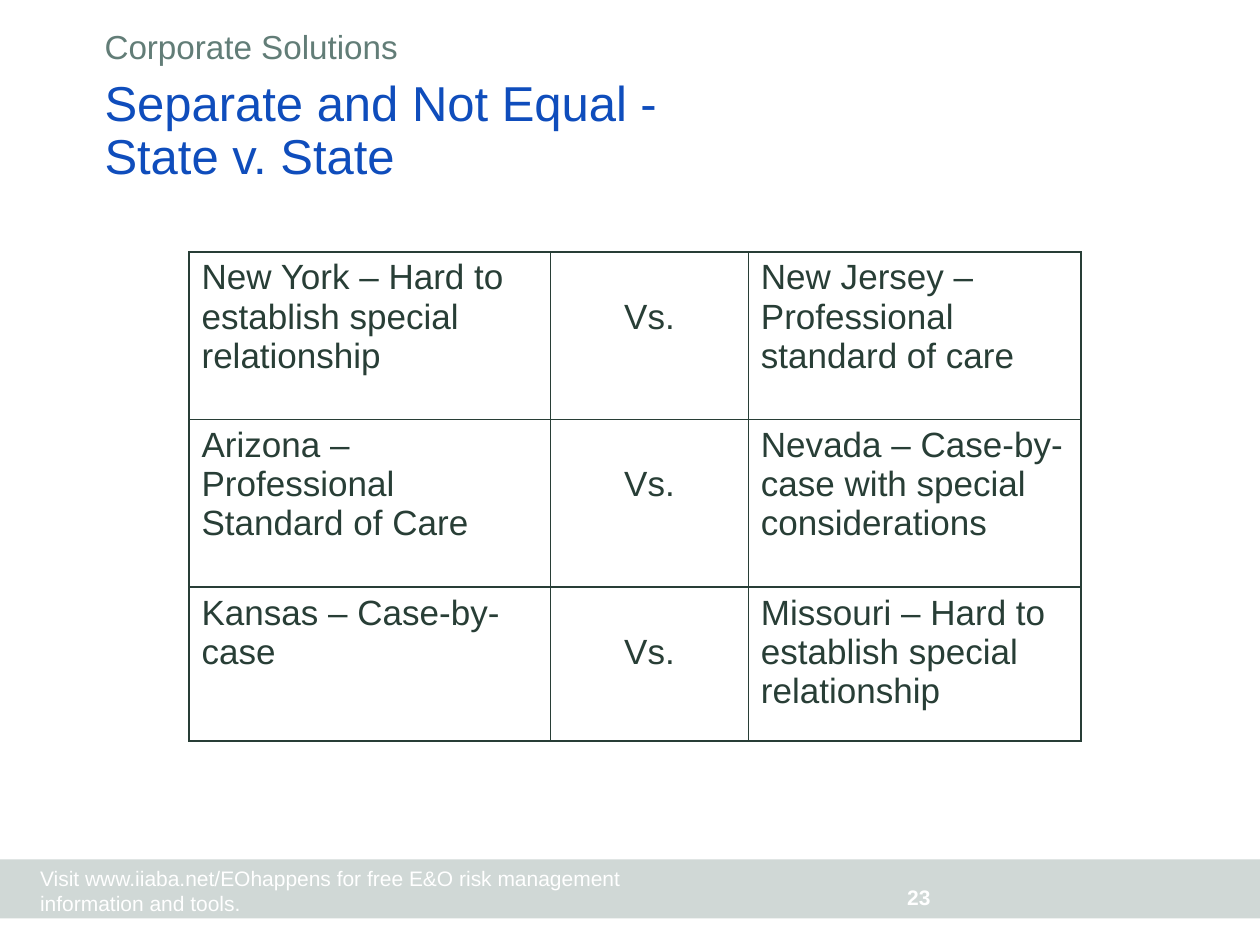
from dataclasses import dataclass

from lxml import etree
from pptx import Presentation
from pptx import util as u
from pptx.dml.color import RGBColor
from pptx.enum import shapes, text
from pptx.oxml import ns

FONT = "Arial"
INK = RGBColor(0x28, 0x3E, 0x36)
BLUE = RGBColor(0x0F, 0x4D, 0xBC)
SAGE = RGBColor(0x62, 0x7D, 0x77)
PALE = RGBColor(0xD0, 0xD8, 0xD6)
WHITE = RGBColor(0xFF, 0xFF, 0xFF)


@dataclass
class Label:
    words: str
    left: float
    top: float
    width: float
    height: float
    size: int
    color: RGBColor
    inset: bool = False
    wrap: bool = True
    bold: bool = False
    low: bool = False


@dataclass
class Match:
    left: str
    right: str


LABELS = [
    Label("Corporate Solutions", 0.83, 0.21, 5.75, 0.3, 19, SAGE),
    Label("Visit www.iiaba.net/EOhappens for free E&O risk management "
          "information and tools.", 0.22, 6.82, 4.96, 0.5, 12, WHITE, inset=True),
    Label("23", 7.2, 6.82, 2.33, 0.4, 12, WHITE, wrap=False, bold=True, low=True),
]
MATCHES = [
    Match("New York – Hard to establish special relationship",
          "New Jersey – Professional standard of care"),
    Match("Arizona – Professional Standard of Care",
          "Nevada – Case-by-case with special considerations"),
    Match("Kansas – Case-by-case",
          "Missouri – Hard to establish special relationship"),
]
COLS = [2.87, 1.57, 2.64]
ROWS = [1.33, 1.33, 1.22]


def add_run(para, words: str, size: int, color: RGBColor, bold: bool = False) -> None:
    run = para.add_run()
    run.text = words
    run.font.name, run.font.size, run.font.bold = FONT, u.Pt(size), bold
    run.font.color.rgb = color


def clear_inset(frame) -> None:
    frame.margin_left = frame.margin_right = u.Inches(0)
    frame.margin_top = frame.margin_bottom = u.Inches(0)


def draw_label(slide, item: Label) -> None:
    box = slide.shapes.add_textbox(u.Inches(item.left), u.Inches(item.top),
                                   u.Inches(item.width), u.Inches(item.height))
    frame = box.text_frame
    frame.word_wrap = item.wrap
    if not item.inset:
        clear_inset(frame)
    if item.low:
        frame.vertical_anchor = text.MSO_ANCHOR.BOTTOM
    add_run(frame.paragraphs[0], item.words, item.size, item.color, item.bold)


def draw_title(slide) -> None:
    title = slide.shapes.title
    title.left, title.top = u.Inches(0.83), u.Inches(0.52)
    title.width, title.height = u.Inches(6.38), u.Inches(0.95)
    frame = title.text_frame
    clear_inset(frame)
    frame.word_wrap = True
    frame.auto_size = text.MSO_AUTO_SIZE.NONE
    frame.vertical_anchor = text.MSO_ANCHOR.BOTTOM
    para = frame.paragraphs[0]
    para.alignment = text.PP_ALIGN.LEFT
    para.line_spacing = 0.9
    add_run(para, "Separate and Not Equal - ", 28, BLUE)
    para.add_line_break()
    add_run(para, "State v. State", 28, BLUE)


def draw_band(slide) -> None:
    band = slide.shapes.add_shape(shapes.MSO_SHAPE.RECTANGLE, u.Inches(0),
                                  u.Inches(6.82), u.Inches(10), u.Inches(0.47))
    band.shadow.inherit = False
    band.fill.solid()
    band.fill.fore_color.rgb = PALE
    band.line.fill.background()


def edge_cell(cell) -> None:
    props = cell._tc.get_or_add_tcPr()
    for side in ("a:lnL", "a:lnR", "a:lnT", "a:lnB"):
        line = etree.SubElement(props, ns.qn(side), w=str(u.Pt(1)))
        fill = etree.SubElement(line, ns.qn("a:solidFill"))
        etree.SubElement(fill, ns.qn("a:srgbClr"), val=str(INK))
    cell.fill.background()


def draw_table(slide) -> None:
    table = slide.shapes.add_table(len(ROWS), len(COLS), u.Inches(1.5), u.Inches(2),
                                   u.Inches(sum(COLS)), u.Inches(sum(ROWS))).table
    table.first_row = table.horz_banding = False
    for col, width in zip(table.columns, COLS):
        col.width = u.Inches(width)
    for row, height, match in zip(table.rows, ROWS, MATCHES):
        row.height = u.Inches(height)
        for cell, words in zip(row.cells, (match.left, "Vs.", match.right)):
            edge_cell(cell)
            add_run(cell.text_frame.paragraphs[0], words, 20, INK)
        # The middle word sits level with the second line beside it
        mid = row.cells[1]
        mid.margin_top = u.Inches(0.36)
        mid.text_frame.paragraphs[0].alignment = text.PP_ALIGN.CENTER


def main() -> None:
    deck = Presentation()
    deck.slide_width, deck.slide_height = u.Inches(10), u.Inches(7.5)
    slide = deck.slides.add_slide(deck.slide_layouts[5])

    # Footer band, then heading, table and labels
    draw_band(slide)
    draw_title(slide)
    draw_table(slide)
    for item in LABELS:
        draw_label(slide, item)

    deck.save("out.pptx")


if __name__ == "__main__":
    main()
